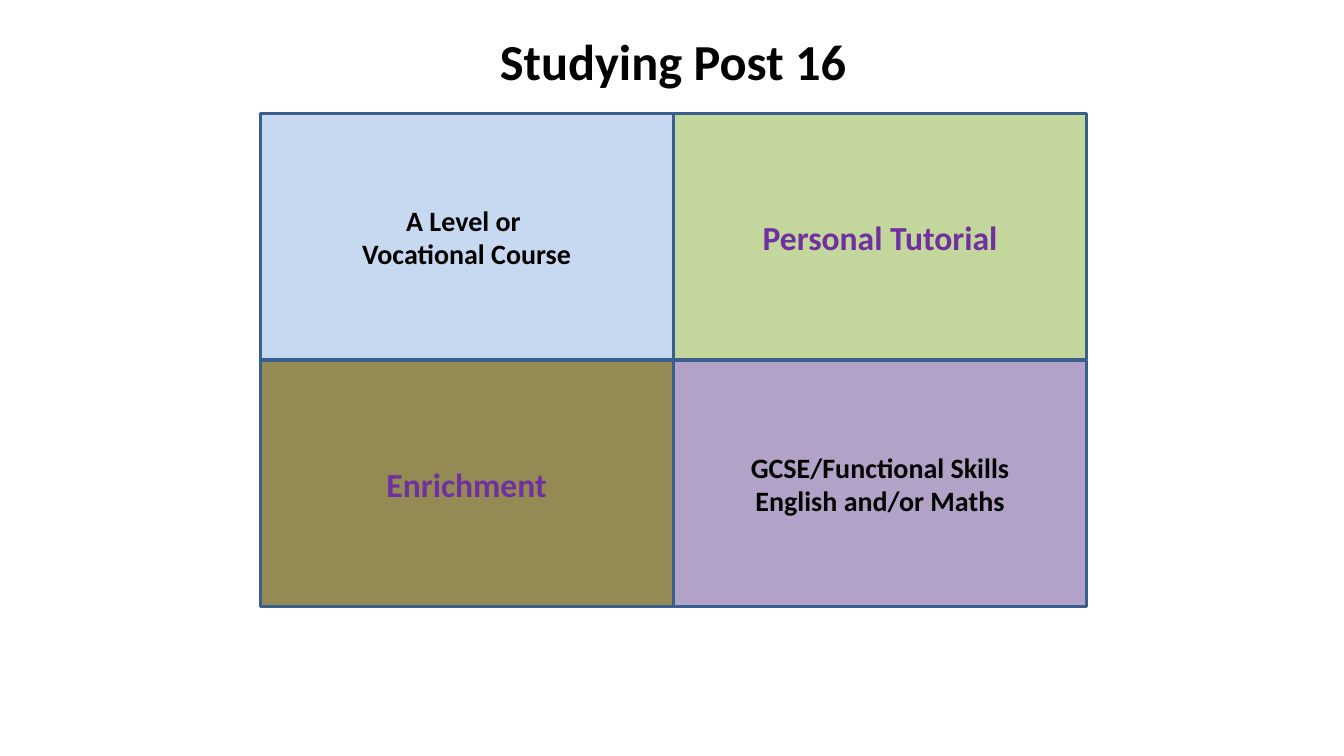
from pptx import Presentation
from pptx.dml.color import RGBColor
from pptx.enum.shapes import MSO_SHAPE as Shape
from pptx.enum.text import MSO_ANCHOR as Anchor, PP_ALIGN as Align
from pptx.util import Cm, Pt

WHITE = RGBColor(0xFF, 0xFF, 0xFF)
BLACK = RGBColor(0x00, 0x00, 0x00)
PURPLE = RGBColor(0x70, 0x30, 0xA0)
BORDER = RGBColor(0x3A, 0x5F, 0x8C)
BLUE = RGBColor(0xC6, 0xD9, 0xF1)
GREEN = RGBColor(0xC3, 0xD6, 0x9B)
OLIVE = RGBColor(0x94, 0x8A, 0x54)
LILAC = RGBColor(0xB3, 0xA2, 0xC7)

GRID_LEFT, GRID_TOP = 6.56, 2.87
CELL_WIDTH, CELL_HEIGHT = 10.4, 6.2
GAP = 0.02

QUADRANTS = [
    [
        (["A Level or ", "Vocational Course"], BLUE, 20, BLACK),
        (["Personal Tutorial"], GREEN, 24, PURPLE),
    ],
    [
        (["Enrichment"], OLIVE, 24, PURPLE),
        (["GCSE/Functional Skills", "English and/or Maths"], LILAC, 20, BLACK),
    ],
]


def write_lines(box, lines, size, colour):
    frame = box.text_frame
    frame.word_wrap = True
    frame.vertical_anchor = Anchor.MIDDLE
    for index, line in enumerate(lines):
        para = frame.add_paragraph() if index else frame.paragraphs[0]
        para.alignment = Align.CENTER
        span = para.add_run()
        span.text = line
        span.font.name = "Calibri"
        span.font.size = Pt(size)
        span.font.bold = True
        span.font.color.rgb = colour


def add_title(page, title):
    box = page.shapes.add_textbox(Cm(7.01), Cm(0.41), Cm(19.91), Cm(2.21))
    box.fill.solid()
    box.fill.fore_color.rgb = WHITE
    write_lines(box, [title], 36, BLACK)


def add_quadrant(page, row, column, lines, fill, size, colour):
    left = GRID_LEFT + column * (CELL_WIDTH + GAP)
    top = GRID_TOP + row * (CELL_HEIGHT + GAP)
    box = page.shapes.add_shape(
        Shape.RECTANGLE, Cm(left), Cm(top), Cm(CELL_WIDTH), Cm(CELL_HEIGHT)
    )
    box.shadow.inherit = False
    box.fill.solid()
    box.fill.fore_color.rgb = fill
    box.line.color.rgb = BORDER
    box.line.width = Pt(2)
    write_lines(box, lines, size, colour)


def main():
    deck = Presentation()
    deck.slide_width = Cm(33.87)
    deck.slide_height = Cm(19.05)
    page = deck.slides.add_slide(deck.slide_layouts[6])
    add_title(page, "Studying Post 16")
    for row, quadrants in enumerate(QUADRANTS):
        for column, quadrant in enumerate(quadrants):
            add_quadrant(page, row, column, *quadrant)
    deck.save("out.pptx")


if __name__ == "__main__":
    main()
